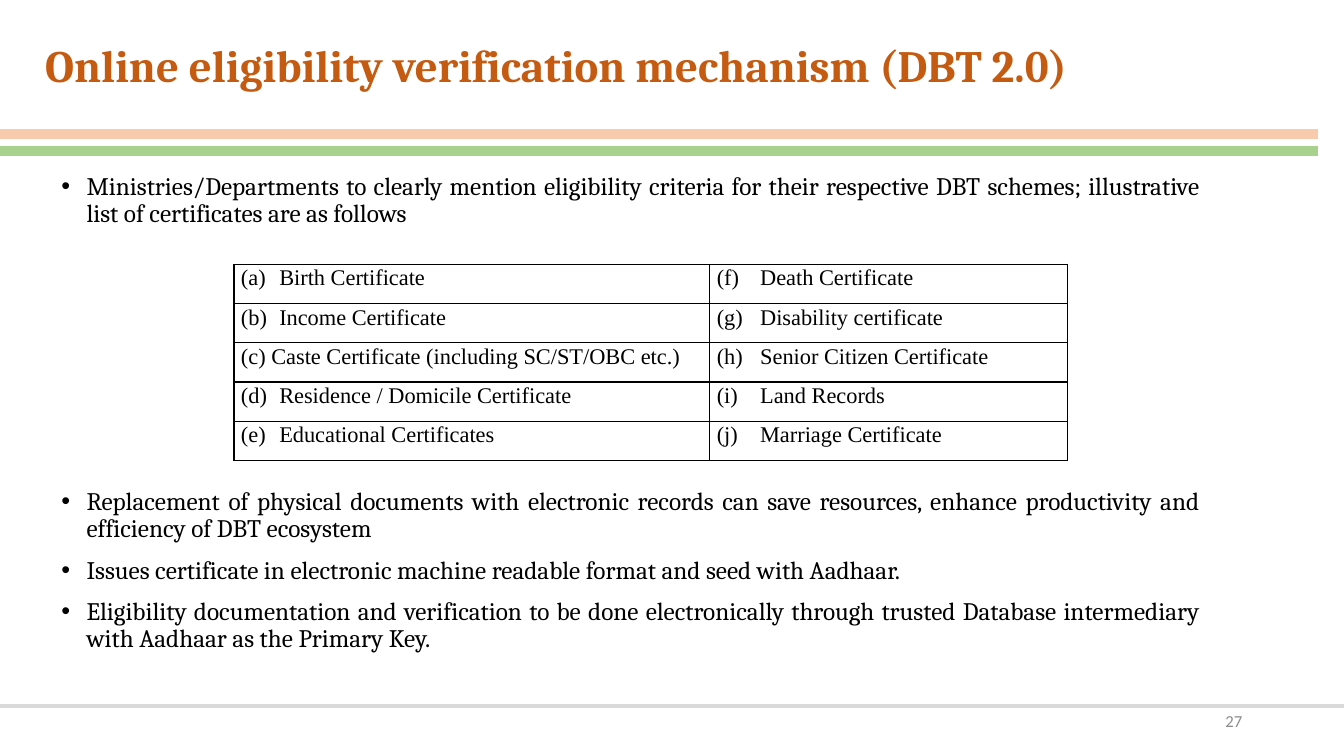
"""Build the slide on online eligibility verification for DBT 2.0."""
import pptx
import pptx.dml.color
import pptx.enum.shapes
import pptx.enum.text
import pptx.oxml
import pptx.oxml.ns
import pptx.util

Inches = pptx.util.Inches
Pt = pptx.util.Pt
Align = pptx.enum.text.PP_ALIGN
Anchor = pptx.enum.text.MSO_ANCHOR
COLORS = {"title": "C55A11", "peach": "F8CBAD", "green": "A9D18E",
          "rule": "D9D9D9", "text": "000000", "number": "8C8C8C"}
NAMESPACE = pptx.oxml.ns.nsdecls("a")


def add_box(left, top, width, height, lines, anchor=Anchor.TOP):
    box = page.shapes.add_textbox(Inches(left), Inches(top), Inches(width), Inches(height))
    frame = box.text_frame
    frame.word_wrap = True
    frame.vertical_anchor = anchor
    frame.text = "\n".join(lines)
    return frame.paragraphs


def style(para, font, size, color, align, spacing=1.0, bold=False):
    para.alignment = align
    para.line_spacing = spacing
    for span in para.runs:
        span.font.name = font
        span.font.size = Pt(size)
        span.font.bold = bold
        span.font.color.rgb = pptx.dml.color.RGBColor.from_string(COLORS[color])


deck = pptx.Presentation()
deck.slide_width = Inches(13.33)
deck.slide_height = Inches(7.5)
page = deck.slides.add_slide(deck.slide_layouts[6])

for y, right, color, weight in [(1.33, 13.07, "peach", 6.75),
                                (1.5, 13.07, "green", 6.75),
                                (7, 13.33, "rule", 2.75)]:
    line = page.shapes.add_connector(pptx.enum.shapes.MSO_CONNECTOR.STRAIGHT,
                                     Inches(0), Inches(y), Inches(right), Inches(y))
    line.line.color.rgb = pptx.dml.color.RGBColor.from_string(COLORS[color])
    line.line.width = Pt(weight)
    line._element.spPr.append(pptx.oxml.parse_xml(f"<a:effectLst {NAMESPACE}/>"))

title = add_box(0.35, 0.37, 12.5, 0.61,
                ["Online eligibility verification mechanism (DBT 2.0)"], Anchor.MIDDLE)
style(title[0], "Cambria", 32, "title", Align.LEFT, 0.9, True)

bullet_groups = [
    (1.67, 0.75, [
        "Ministries/Departments to clearly mention eligibility criteria for their "
        "respective DBT schemes; illustrative list of certificates are as follows"]),
    (4.8, 1.9, [
        "Replacement of physical documents with electronic records can save resources, "
        "enhance productivity and efficiency of DBT ecosystem",
        "Issues certificate in electronic machine readable format and seed with Aadhaar.",
        "Eligibility documentation and verification to be done electronically through "
        "trusted Database intermediary with Aadhaar as the Primary Key."]),
]
for top, height, bullets in bullet_groups:
    for index, para in enumerate(add_box(0.51, top, 11.49, height, bullets)):
        properties = para._p.get_or_add_pPr()
        properties.set("marL", str(Inches(0.25)))
        properties.set("indent", str(-Inches(0.25)))
        properties.append(pptx.oxml.parse_xml(f'<a:buFont {NAMESPACE} typeface="Arial"/>'))
        properties.append(pptx.oxml.parse_xml(f'<a:buChar {NAMESPACE} char="•"/>'))
        style(para, "Cambria", 18, "text", Align.JUSTIFY, 0.9)
        if index:
            para.space_before = Pt(10)

certificates = [
    ("(a)\tBirth Certificate", "(f)\tDeath Certificate"),
    ("(b)\tIncome Certificate", "(g)\tDisability certificate"),
    ("(c) Caste Certificate (including SC/ST/OBC etc.)", "(h)\tSenior Citizen Certificate"),
    ("(d)\tResidence / Domicile Certificate", "(i)\tLand Records"),
    ("(e)\tEducational Certificates", "(j)\tMarriage Certificate"),
]
table = page.shapes.add_table(len(certificates), 2, Inches(2.32), Inches(2.62),
                              Inches(8.27), Inches(1.94)).table
table.first_row = False
table.horz_banding = False
for column, width in zip(table.columns, (4.72, 3.55)):
    column.width = Inches(width)
for row, texts in zip(table.rows, certificates):
    row.height = Inches(0.39)
    for cell, text, tab in zip(row.cells, texts, (0.38, 0.43)):
        cell.margin_left = cell.margin_right = Inches(0.07)
        cell.margin_top = cell.margin_bottom = 0
        cell.text = text
        para = cell.text_frame.paragraphs[0]
        para._p.get_or_add_pPr().append(pptx.oxml.parse_xml(
            f'<a:tabLst {NAMESPACE}><a:tab pos="{Inches(tab)}" algn="l"/></a:tabLst>'))
        style(para, "Times New Roman", 16, "text", Align.JUSTIFY, 1.07)
        for side in ("lnL", "lnR", "lnT", "lnB"):
            cell._tc.get_or_add_tcPr().append(pptx.oxml.parse_xml(
                f'<a:{side} {NAMESPACE} w="{Pt(1)}"><a:solidFill>'
                f'<a:srgbClr val="{COLORS["text"]}"/></a:solidFill></a:{side}>'))
        cell.fill.background()

number = add_box(9.42, 6.95, 3, 0.4, ["27"], Anchor.MIDDLE)
style(number[0], "Calibri", 12, "number", Align.RIGHT)

deck.save("out.pptx")
